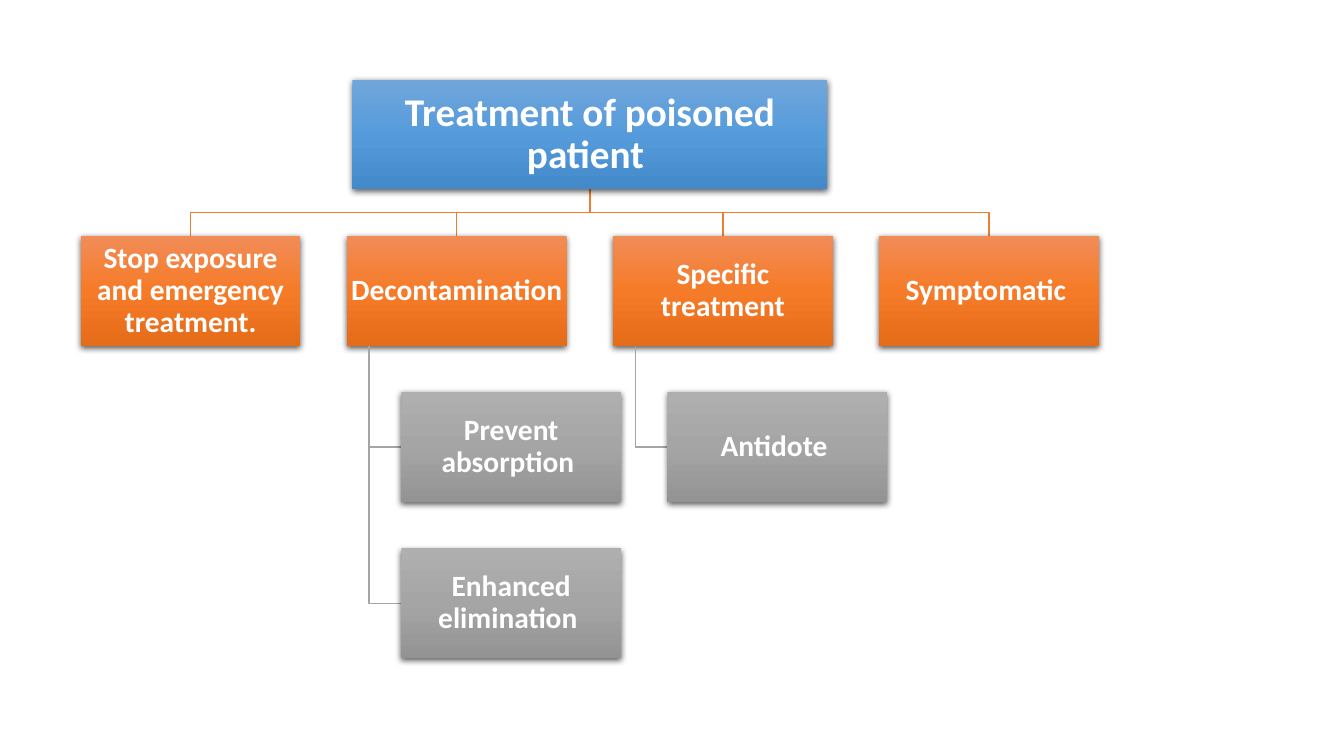
from copy import deepcopy
from dataclasses import dataclass

from lxml import etree
from pptx import Presentation
from pptx.dml.color import RGBColor
from pptx.enum.shapes import MSO_SHAPE
from pptx.enum.text import MSO_ANCHOR, PP_ALIGN
from pptx.oxml.ns import qn
from pptx.util import Inches, Pt

RECT = MSO_SHAPE.RECTANGLE
MIDDLE = MSO_ANCHOR.MIDDLE
CENTER = PP_ALIGN.CENTER


@dataclass(frozen=True)
class Theme:
    font: str = "Calibri"
    text: str = "FFFFFF"
    shadow: str = "000000"
    blue: tuple = ("71A6DB", "559BDB", "448ACA")
    orange: tuple = ("F18C57", "F67B28", "E56C19")
    gray: tuple = ("AFAFAF", "A5A5A5", "939393")
    orange_line: str = "ED7D31"
    gray_line: str = "A5A5A5"
    title_size: int = 28
    box_size: int = 21
    line_width: int = 1


THEME = Theme()

LEFT, TOP = 0.8, 0.79
COLUMN_STEP, ROW_STEP = 2.64, 1.55
BOX_W, BOX_H, ROOT_W = 2.18, 1.09, 4.71
CHILD_INDENT, TRUNK_INDENT = 0.54, 0.22

ROOT = "Treatment of poisoned patient "
BRANCHES = [
    ("Stop exposure and emergency treatment.", []),
    ("Decontamination ", ["Prevent absorption ", "Enhanced elimination "]),
    ("Specific treatment", ["Antidote "]),
    ("Symptomatic ", []),
]


def fill_gradient(shape, colors):
    shape.fill.gradient()
    shape.fill.gradient_angle = 270
    stops = shape._element.spPr.find(".//" + qn("a:gsLst"))
    stops.append(deepcopy(stops[0]))
    for i, (stop, color) in enumerate(zip(shape.fill.gradient_stops, colors)):
        stop.position = i / 2
        stop.color.rgb = RGBColor.from_string(color)


def add_shadow(shape):
    shape.shadow.inherit = False
    effects = shape._element.spPr.find(qn("a:effectLst"))
    shadow = etree.SubElement(
        effects, qn("a:outerShdw"), blurRad=str(Pt(4.5)), dist=str(Pt(1.5)),
        dir="5400000", algn="ctr", rotWithShape="0")
    color = etree.SubElement(shadow, qn("a:srgbClr"), val=THEME.shadow)
    etree.SubElement(color, qn("a:alpha"), val="63000")


def add_box(s, text, x, y, colors, w=BOX_W, size=THEME.box_size, inset=0.01):
    box = s.shapes.add_shape(RECT, Inches(x), Inches(y), Inches(w), Inches(BOX_H))
    fill_gradient(box, colors)
    box.line.fill.background()
    add_shadow(box)
    tf = box.text_frame
    tf.word_wrap = True
    tf.vertical_anchor = MIDDLE
    tf.margin_left = tf.margin_right = Inches(inset)
    tf.margin_top = tf.margin_bottom = Inches(inset)
    p = tf.paragraphs[0]
    p.alignment = CENTER
    p.line_spacing = 0.9
    r = p.add_run()
    r.text = text
    r.font.name = THEME.font
    r.font.size = Pt(size)
    r.font.bold = True
    r.font.color.rgb = RGBColor.from_string(THEME.text)


def add_link(s, points, color):
    start, *rest = [(Inches(x), Inches(y)) for x, y in points]
    builder = s.shapes.build_freeform(*start)
    builder.add_line_segments(rest, close=False)
    link = builder.convert_to_shape()
    link.fill.background()
    link.line.color.rgb = RGBColor.from_string(color)
    link.line.width = Pt(THEME.line_width)
    link.shadow.inherit = False


def add_branch(s, column, label, children, root_x):
    x, y = LEFT + column * COLUMN_STEP, TOP + ROW_STEP
    center, root_bottom = x + BOX_W / 2, TOP + BOX_H
    bend = (root_bottom + y) / 2
    add_link(s, [(root_x, root_bottom), (root_x, bend), (center, bend), (center, y)],
             THEME.orange_line)
    add_box(s, label, x, y, THEME.orange)
    trunk, child_x = x + TRUNK_INDENT, x + CHILD_INDENT
    for row, child in enumerate(children, 1):
        child_y = y + row * ROW_STEP
        middle = child_y + BOX_H / 2
        add_link(s, [(trunk, y + BOX_H), (trunk, middle), (child_x, middle)],
                 THEME.gray_line)
        add_box(s, child, child_x, child_y, THEME.gray)


def main():
    prs = Presentation()
    prs.slide_width, prs.slide_height = Inches(13.33), Inches(7.5)
    s = prs.slides.add_slide(prs.slide_layouts[6])
    root_x = LEFT + (len(BRANCHES) - 1) * COLUMN_STEP / 2 + BOX_W / 2
    for column, (label, children) in enumerate(BRANCHES):
        add_branch(s, column, label, children, root_x)
    add_box(s, ROOT, root_x - ROOT_W / 2, TOP, THEME.blue, ROOT_W,
            THEME.title_size, 0.02)
    prs.save("out.pptx")


if __name__ == "__main__":
    main()
